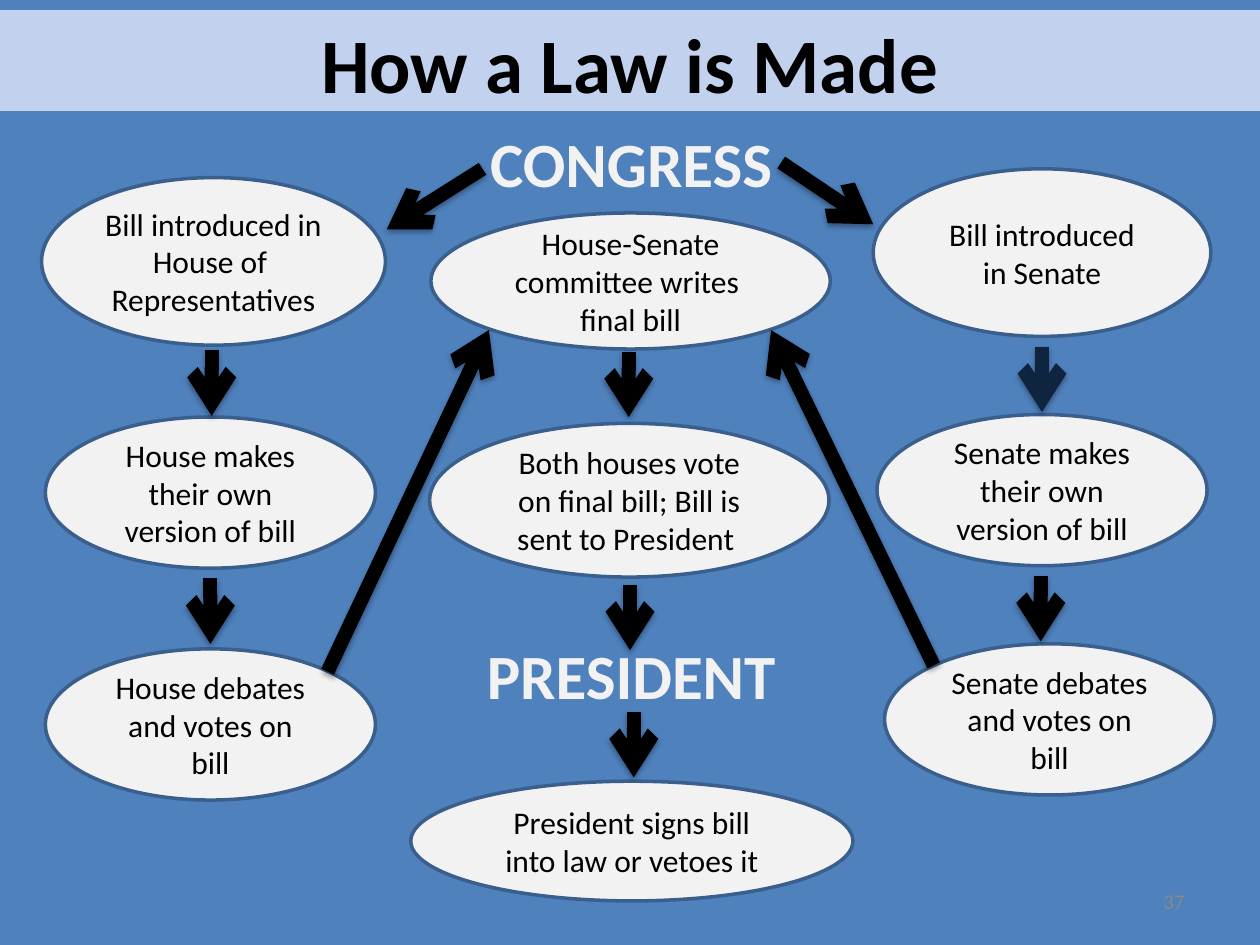
from lxml import etree
from pptx import Presentation
from pptx.dml.color import RGBColor
from pptx.enum.shapes import MSO_CONNECTOR, MSO_SHAPE
from pptx.enum.text import MSO_ANCHOR, PP_ALIGN
from pptx.oxml import parse_xml
from pptx.oxml.ns import nsdecls, qn
from pptx.util import Pt

PX = 9144  # EMU per px, 100 px to the inch
OVAL, RECT = MSO_SHAPE.OVAL, MSO_SHAPE.RECTANGLE
STRAIGHT = MSO_CONNECTOR.STRAIGHT
TOP, MIDDLE = MSO_ANCHOR.TOP, MSO_ANCHOR.MIDDLE
CENTER, RIGHT = PP_ALIGN.CENTER, PP_ALIGN.RIGHT
FONT = "Calibri"
DOWN = 52  # length of each downward arrow
COLORS = {
    "background": "4F81BD",
    "banner": "C2D1ED",
    "step": "F2F2F2",
    "outline": "3A5F8C",
    "text": "000000",
    "arrow": "000000",
    "navy": "0F243E",
    "number": "898989",
}


def rgb(name):
    return RGBColor.from_string(COLORS[name])


def emu(*lengths):
    return [length * PX for length in lengths]


def write(shape, text, size, color="text", bold=False, align=CENTER, anchor=TOP):
    frame = shape.text_frame
    frame.word_wrap = True
    frame.vertical_anchor = anchor
    frame.text = text
    for paragraph in frame.paragraphs:
        paragraph.alignment = align
        for run in paragraph.runs:
            run.font.name = FONT
            run.font.size = Pt(size)
            run.font.bold = bold
            run.font.color.rgb = rgb(color)


def add_label(slide, box, text, size, color, bold=False, align=CENTER, anchor=TOP):
    label = slide.shapes.add_textbox(*emu(*box))
    write(label, text, size, color, bold, align, anchor)


def add_step(slide, box, text):
    step = slide.shapes.add_shape(OVAL, *emu(*box))
    step.shadow.inherit = False
    step.fill.solid()
    step.fill.fore_color.rgb = rgb("step")
    step.line.color.rgb = rgb("outline")
    step.line.width = Pt(2)
    write(step, text, 18, anchor=MIDDLE)


def add_arrow(slide, x1, y1, x2, y2, color="arrow"):
    arrow = slide.shapes.add_connector(STRAIGHT, *emu(x1, y1, x2, y2))
    arrow.line.color.rgb = rgb(color)
    arrow.line.width = Pt(8)
    etree.SubElement(arrow.line._get_or_add_ln(), qn("a:tailEnd"), type="arrow")
    arrow._element.spPr.append(parse_xml(
        f'<a:effectLst {nsdecls("a")}>'
        f'<a:outerShdw blurRad="{Pt(3.1)}" dist="{Pt(1.8)}" dir="5400000" rotWithShape="0">'
        '<a:srgbClr val="000000"><a:alpha val="35000"/></a:srgbClr>'
        '</a:outerShdw></a:effectLst>'))


def add_banner(slide, left, top, width, height):
    banner = slide.shapes.add_shape(RECT, *emu(left, top, width, height))
    banner.shadow.inherit = False
    banner.fill.solid()
    banner.fill.fore_color.rgb = rgb("banner")
    banner.line.fill.background()
    write(banner, "How a Law is Made", 44, bold=True)


def add_column(slide, left, top, steps, arrows):
    """Steps are (x, y, width, height, text) and arrows (x, y, color) within the column."""
    for x, y, width, height, text in steps:
        add_step(slide, (left + x, top + y, width, height), text)
    for x, y, color in arrows:
        add_arrow(slide, left + x, top + y, left + x, top + y + DOWN, color)


def add_house(slide, left, top):
    add_column(slide, left, top, [
        (0, 0, 273, 133, "Bill introduced in House of \nRepresentatives"),
        (3, 190, 262, 120, "House makes their own version of bill"),
        (3, 374, 262, 120, "House debates and votes on bill"),
    ], [(135, 137, "arrow"), (134, 318, "arrow")])


def add_senate(slide, left, top):
    add_column(slide, left, top, [
        (0, 0, 268, 133, "Bill introduced in Senate"),
        (3, 195, 262, 120, "Senate makes their own version of bill"),
        (9, 377, 262, 120, "Senate debates and votes on bill"),
    ], [(134, 141, "navy"), (133, 323, "arrow")])


def add_center(slide, left, top):
    add_column(slide, left, top, [
        (16, 75, 317, 108, "House-Senate committee writes \nfinal bill"),
        (15, 242, 317, 122, "Both houses vote on final bill; Bill is sent to President "),
        (0, 526, 351, 95, "President signs bill into law or vetoes it"),
    ], [(173, 185, "arrow"), (174, 370, "arrow"), (177, 471, "arrow")])
    for y, branch in [(0, "CONGRESS"), (406, "PRESIDENT")]:
        add_label(slide, (left + 50, top + y, 250, 70), branch, 36, "step", bold=True)


def add_cross_arrows(slide):
    # Congress out to each chamber, then each chamber back to the committee
    for ends in [(383, 134, 307, 182), (620, 129, 693, 178),
                 (260, 533, 388, 262), (741, 528, 612, 262)]:
        add_arrow(slide, *ends)


def main():
    deck = Presentation()
    deck.slide_width, deck.slide_height = emu(1000, 750)
    slide = deck.slides.add_slide(deck.slide_layouts[6])
    slide.background.fill.solid()
    slide.background.fill.fore_color.rgb = rgb("background")

    add_banner(slide, 0, 8, 1000, 80)
    add_house(slide, 33, 141)
    add_senate(slide, 693, 134)
    add_center(slide, 326, 94)
    add_cross_arrows(slide)

    # Slide number
    add_label(slide, (717, 695, 233, 40), "37", 12, "number", align=RIGHT, anchor=MIDDLE)
    deck.save("out.pptx")


if __name__ == "__main__":
    main()
